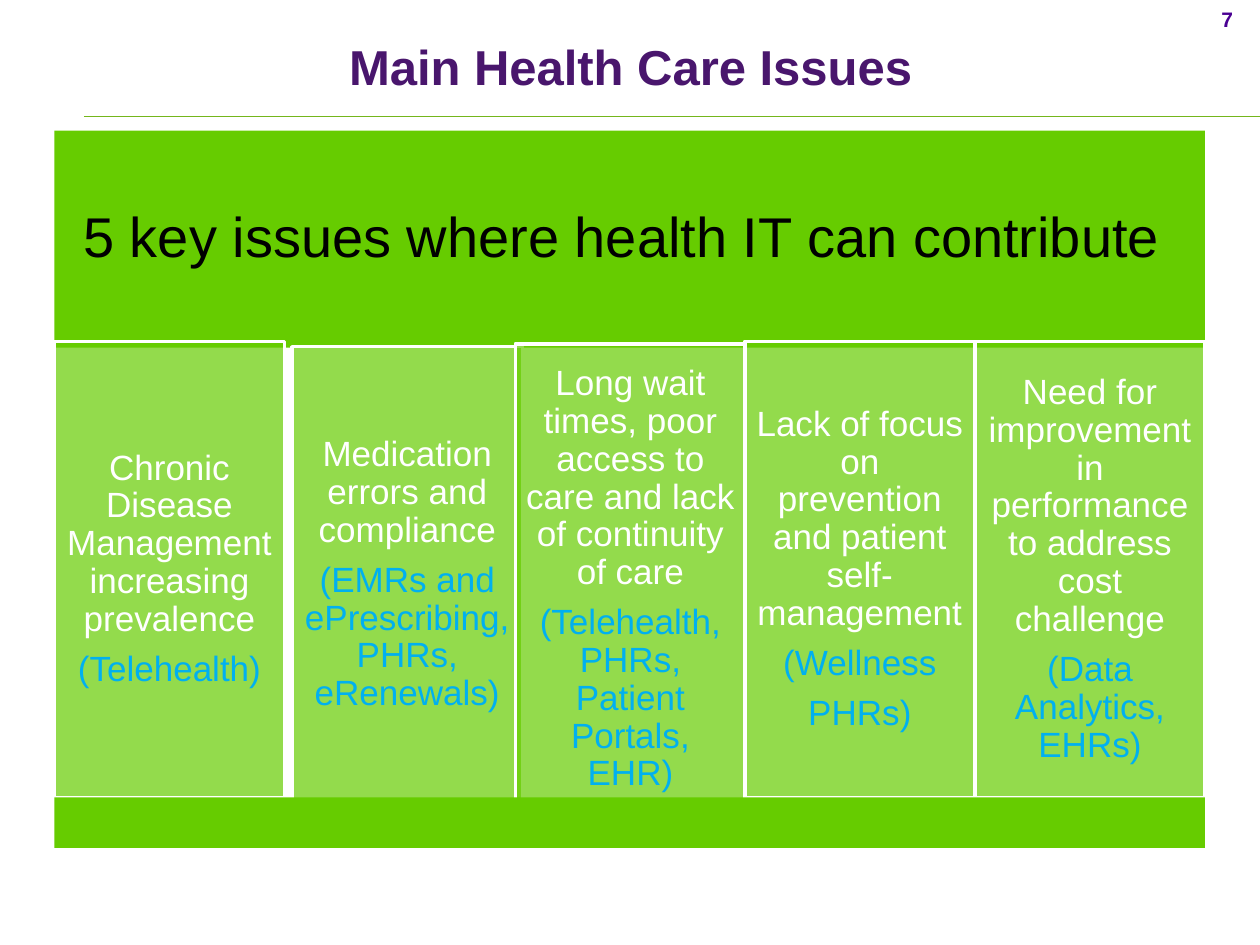
from lxml import etree
from pptx import Presentation
from pptx.dml.color import RGBColor
from pptx.enum.shapes import MSO_CONNECTOR, MSO_SHAPE
from pptx.enum.text import MSO_ANCHOR, MSO_AUTO_SIZE, PP_ALIGN
from pptx.oxml.ns import qn
from pptx.util import Pt

RECT = MSO_SHAPE.RECTANGLE
LINE = MSO_CONNECTOR.STRAIGHT
MID = MSO_ANCHOR.MIDDLE
CENTER = PP_ALIGN.CENTER
NO_FIT = MSO_AUTO_SIZE.NONE

HUES = {"band": "66CC00", "rule": "74B61B", "title": "49166D",
        "page": "4A0093", "issue": "FFFFFF", "tool": "00B0F0",
        "head": "000000"}
LEFT, WIDTH = 31.1, 657.5
TOP, TALL = 195.1, 260.6
ISSUES = [
    (["Chronic Disease Management increasing prevalence",
      "(Telehealth)"], 0, 0, 0),
    (["Medication errors and compliance",
      "(EMRs and ePrescribing, PHRs, eRenewals)"], 4.4, 3, 0),
    (["Long wait times, poor access to care and lack of continuity of care",
      "(Telehealth, PHRs, Patient Portals, EHR)"], 0.4, 1.4, 8.7),
    (["Lack of focus on prevention and patient self-management",
      "(Wellness", "PHRs)"], 0, 0, 0),
    (["Need for improvement in performance to address cost challenge",
      "(Data Analytics, EHRs)"], 0, 0, 0),
]


def hue(name):
    """Return the named colour."""
    return RGBColor.from_string(HUES[name])


def style(para, text, size, name, bold=False):
    """Fill a centred paragraph and set its font."""
    para.text = text
    para.alignment = CENTER
    font = para.font
    font.name, font.size, font.bold = "Arial", Pt(size), bold
    font.color.rgb = hue(name)


def place(shape, x, y, w, h):
    """Move and size a shape."""
    shape.left, shape.top, shape.width, shape.height = map(Pt, (x, y, w, h))


def add_rule(slide, x, y, end):
    """Draw the thin line below the title."""
    rule = slide.shapes.add_connector(LINE, Pt(x), Pt(y), Pt(end), Pt(y))
    rule.line.color.rgb = hue("rule")
    rule.line.width = Pt(0.5)
    etree.SubElement(rule._element.spPr, qn("a:effectLst"))


def add_title(slide, text):
    """Set the title in its placeholder."""
    title = slide.shapes.title
    place(title, 190, 17.3, 340.6, 41)
    frame = title.text_frame
    frame.word_wrap = False
    frame.auto_size = NO_FIT
    frame.vertical_anchor = MID
    style(frame.paragraphs[0], text, 28, "title", True)


def add_page(slide, text):
    """Write the page number in the corner."""
    box = slide.shapes.add_textbox(Pt(682.6), Pt(0), Pt(37.4), Pt(21.6))
    box.text_frame.word_wrap = True
    style(box.text_frame.paragraphs[0], text, 12, "page", True)


def add_band(slide, y, h):
    """Add a full-width green band."""
    band = slide.shapes.add_shape(RECT, Pt(LEFT), Pt(y), Pt(WIDTH), Pt(h))
    band.shadow.inherit = False
    band.fill.solid()
    band.fill.fore_color.rgb = hue("band")
    band.line.fill.background()
    return band


def add_card(slide, x, y, w, h):
    """Add a see-through green card with a white edge."""
    card = add_band(slide, y, h)
    place(card, x, y, w, h)
    tint = card._element.spPr.find(qn("a:solidFill")).find(qn("a:srgbClr"))
    etree.SubElement(tint, qn("a:alpha"), val="70000")
    card.line.color.rgb = hue("issue")
    card.line.width = Pt(2)
    return card


def write(shape, lines, size, names, inset):
    """Write spaced, centred lines, the first in its own colour."""
    frame = shape.text_frame
    frame.word_wrap = True
    frame.vertical_anchor = MID
    frame.margin_left = frame.margin_right = Pt(inset)
    frame.margin_top = frame.margin_bottom = Pt(inset)
    for i, text in enumerate(lines):
        para = frame.add_paragraph() if i else frame.paragraphs[0]
        para.line_spacing = 0.9
        para.space_after = Pt(size * 0.35)
        style(para, text, size, names[min(i, 1)])


def main():
    """Build and save the slide."""
    deck = Presentation()
    deck.slide_width, deck.slide_height = Pt(720), Pt(540)
    slide = deck.slides.add_slide(deck.slide_layouts[5])
    add_rule(slide, 48, 66.8, 720)
    add_page(slide, "7")
    add_title(slide, "Main Health Care Issues")
    head = add_band(slide, 74.7, 124)
    write(head, ["5 key issues where health IT can contribute "], 32,
          ["head"], 9)
    step = WIDTH / len(ISSUES)
    for i, (lines, dx, dy, grow) in enumerate(ISSUES):
        card = add_card(slide, LEFT + i * step + dx, TOP + dy, step,
                        TALL + grow)
        write(card, lines, 20, ["issue", "tool"], 5.6)
    add_band(slide, TOP + TALL, 28.9)
    deck.save("out.pptx")


if __name__ == "__main__":
    main()
